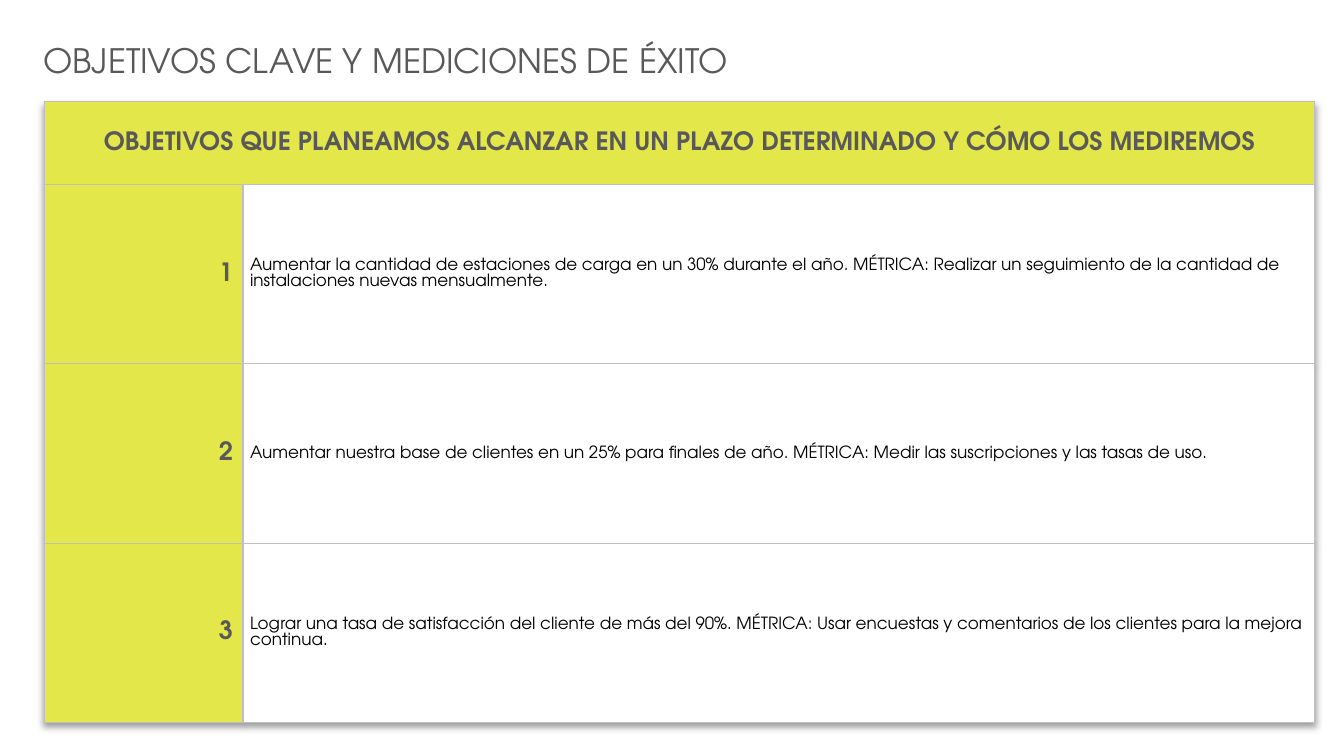
from dataclasses import dataclass

from pptx import Presentation
from pptx.dml.color import RGBColor
from pptx.enum.text import MSO_ANCHOR, MSO_AUTO_SIZE, PP_ALIGN
from pptx.oxml import parse_xml
from pptx.oxml.ns import nsdecls
from pptx.slide import Slide
from pptx.table import Table, _Cell
from pptx.text.text import TextFrame
from pptx.util import Inches, Pt

FONT = "TeX Gyre Adventor"
GRAY = RGBColor(0x59, 0x59, 0x59)
BLACK = RGBColor(0x00, 0x00, 0x00)
WHITE = RGBColor(0xFF, 0xFF, 0xFF)
LIME = RGBColor(0xE3, 0xE7, 0x49)
BORDER = RGBColor(0xBF, 0xBF, 0xBF)

TITLE = "OBJETIVOS CLAVE Y MEDICIONES DE ÉXITO"
HEADING = "OBJETIVOS QUE PLANEAMOS ALCANZAR EN UN PLAZO DETERMINADO Y CÓMO LOS MEDIREMOS"
GOALS = [
    "Aumentar la cantidad de estaciones de carga en un 30% durante el año. "
    "MÉTRICA: Realizar un seguimiento de la cantidad de instalaciones nuevas mensualmente.",
    "Aumentar nuestra base de clientes en un 25% para finales de año. "
    "MÉTRICA: Medir las suscripciones y las tasas de uso.",
    "Lograr una tasa de satisfacción del cliente de más del 90%. "
    "MÉTRICA: Usar encuestas y comentarios de los clientes para la mejora continua.",
]
COLUMN_WIDTHS = [1.97, 10.63]
HEADING_HEIGHT = 0.82
GOAL_HEIGHT = 1.78


@dataclass(frozen=True)
class TextStyle:
    size: float
    color: RGBColor
    bold: bool = False
    align: PP_ALIGN = PP_ALIGN.LEFT
    line_spacing: float | None = None


@dataclass(frozen=True)
class CellStyle:
    text: TextStyle
    fill: RGBColor
    compact: bool = False


TITLE_STYLE = TextStyle(24, GRAY)
HEADING_STYLE = CellStyle(TextStyle(18, GRAY, True, PP_ALIGN.CENTER), LIME)
NUMBER_STYLE = CellStyle(TextStyle(18, GRAY, True, PP_ALIGN.RIGHT), LIME)
GOAL_STYLE = CellStyle(TextStyle(12, BLACK, line_spacing=11), WHITE, compact=True)


def write_text(frame: TextFrame, text: str, style: TextStyle) -> None:
    frame.text = text
    para = frame.paragraphs[0]
    para.alignment = style.align
    if style.line_spacing is not None:
        para.line_spacing = Pt(style.line_spacing)
    for span in para.runs:
        span.font.name = FONT
        span.font.size = Pt(style.size)
        span.font.bold = style.bold
        span.font.color.rgb = style.color


def add_borders(cell: _Cell) -> None:
    properties = cell._tc.get_or_add_tcPr()
    for side in ("lnL", "lnR", "lnT", "lnB"):
        properties.append(parse_xml(
            f'<a:{side} {nsdecls("a")} w="{Pt(1)}"><a:solidFill>'
            f'<a:srgbClr val="{BORDER}"/></a:solidFill></a:{side}>'
        ))


def fill_cell(cell: _Cell, text: str, style: CellStyle) -> None:
    write_text(cell.text_frame, text, style.text)
    cell.vertical_anchor = MSO_ANCHOR.MIDDLE
    if style.compact:
        cell.margin_left = cell.margin_right = Inches(0.07)
        cell.margin_top = cell.margin_bottom = Inches(0)
    cell.fill.solid()
    cell.fill.fore_color.rgb = style.fill


def add_shadow(table: Table) -> None:
    table._tbl.tblPr.insert(0, parse_xml(
        f'<a:effectLst {nsdecls("a")}>'
        f'<a:outerShdw blurRad="{Pt(4)}" dist="{Pt(3)}" dir="5400000" algn="t" rotWithShape="0">'
        '<a:srgbClr val="000000"><a:alpha val="40000"/></a:srgbClr>'
        '</a:outerShdw></a:effectLst>'
    ))


def add_title(page: Slide) -> None:
    title = page.shapes.title
    title.left, title.top = Inches(0.33), Inches(0.35)
    title.width, title.height = Inches(8.08), Inches(0.5)
    frame = title.text_frame
    write_text(frame, TITLE, TITLE_STYLE)
    frame.word_wrap = True
    frame.auto_size = MSO_AUTO_SIZE.NONE
    frame.vertical_anchor = MSO_ANCHOR.MIDDLE


def add_goal_table(page: Slide) -> None:
    heights = [HEADING_HEIGHT] + [GOAL_HEIGHT] * len(GOALS)
    table = page.shapes.add_table(
        len(heights), len(COLUMN_WIDTHS), Inches(0.44), Inches(1.01),
        Inches(sum(COLUMN_WIDTHS)), Inches(sum(heights)),
    ).table
    table.first_row = False
    table.horz_banding = False
    add_shadow(table)
    for column, width in zip(table.columns, COLUMN_WIDTHS):
        column.width = Inches(width)
    for row, height in zip(table.rows, heights):
        row.height = Inches(height)
        for cell in row.cells:
            add_borders(cell)
    table.cell(0, 0).merge(table.cell(0, 1))
    fill_cell(table.cell(0, 0), HEADING, HEADING_STYLE)
    for number, goal in enumerate(GOALS, start=1):
        fill_cell(table.cell(number, 0), str(number), NUMBER_STYLE)
        fill_cell(table.cell(number, 1), goal, GOAL_STYLE)


def main() -> None:
    deck = Presentation()
    deck.slide_width, deck.slide_height = Inches(13.33), Inches(7.5)
    page = deck.slides.add_slide(deck.slide_layouts[5])
    add_title(page)
    add_goal_table(page)
    deck.save("out.pptx")


if __name__ == "__main__":
    main()
